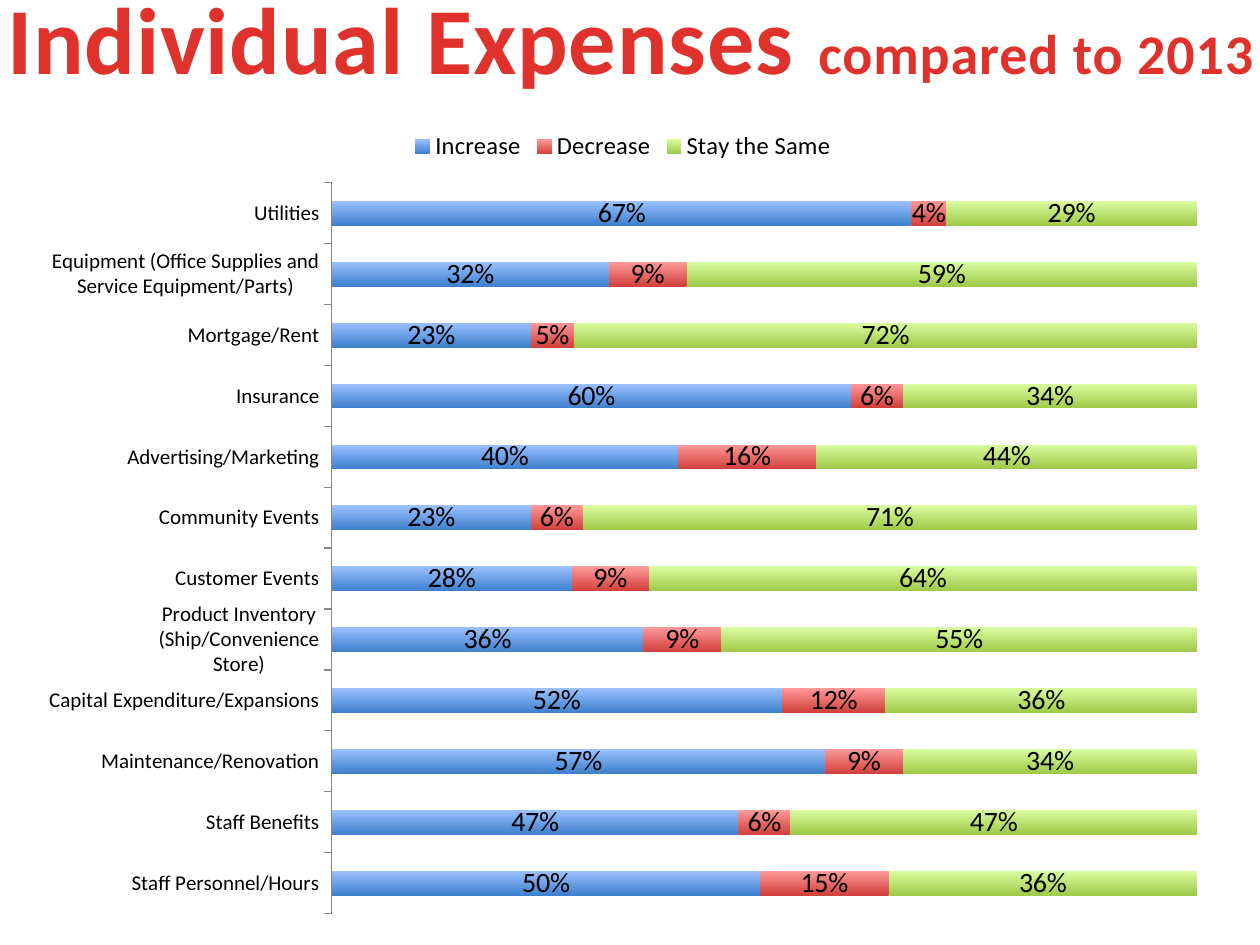
from dataclasses import dataclass

from pptx import Presentation
from pptx.chart.data import CategoryChartData
from pptx.dml.color import RGBColor
from pptx.enum.chart import XL_CHART_TYPE, XL_LEGEND_POSITION, XL_TICK_LABEL_POSITION, XL_TICK_MARK
from pptx.enum.text import MSO_AUTO_SIZE, PP_ALIGN
from pptx.util import Inches, Pt

FONT = "Calibri"
TITLE_RED = RGBColor(0xE0, 0x32, 0x2D)
BLACK = RGBColor(0, 0, 0)
AXIS_GRAY = RGBColor(0x86, 0x86, 0x86)


@dataclass
class Answer:
    name: str
    top: RGBColor
    bottom: RGBColor


ANSWERS = [
    Answer("Increase", RGBColor(0x9B, 0xC1, 0xFF), RGBColor(0x3F, 0x80, 0xCD)),
    Answer("Decrease", RGBColor(0xFF, 0x9A, 0x99), RGBColor(0xD1, 0x40, 0x3C)),
    Answer("Stay the Same", RGBColor(0xDA, 0xFD, 0xA0), RGBColor(0x9F, 0xCA, 0x49)),
]

EXPENSES = [
    ("Staff Personnel/Hours", 0.50, 0.15, 0.36),
    ("Staff Benefits", 0.47, 0.06, 0.47),
    ("Maintenance/Renovation", 0.57, 0.09, 0.34),
    ("Capital Expenditure/Expansions", 0.52, 0.12, 0.36),
    ("Product Inventory (Ship/Convenience Store)", 0.36, 0.09, 0.55),
    ("Customer Events", 0.28, 0.09, 0.64),
    ("Community Events", 0.23, 0.06, 0.71),
    ("Advertising/Marketing", 0.40, 0.16, 0.44),
    ("Insurance", 0.60, 0.06, 0.34),
    ("Mortgage/Rent", 0.23, 0.05, 0.72),
    ("Equipment (Office Supplies and Service Equipment/Parts)", 0.32, 0.09, 0.59),
    ("Utilities", 0.67, 0.04, 0.29),
]


def set_font(font, size: float, color: RGBColor = BLACK, bold: bool = False) -> None:
    font.name = FONT
    font.size = Pt(size)
    font.bold = bold
    font.color.rgb = color


def add_title(s) -> None:
    tf = s.shapes.add_textbox(Inches(-0.21), Inches(-0.21), Inches(10.43), Inches(1.01)).text_frame
    tf.word_wrap = False
    tf.auto_size = MSO_AUTO_SIZE.SHAPE_TO_FIT_TEXT
    p = tf.paragraphs[0]
    p.alignment = PP_ALIGN.CENTER
    for text, size in (("Individual Expenses ", 54), ("compared to 2013", 32)):
        r = p.add_run()
        r.text = text
        set_font(r.font, size, TITLE_RED, bold=True)
        r._r.get_or_add_rPr().set("spc", "50")


def style_series(series, answer: Answer) -> None:
    fill = series.format.fill
    fill.gradient()
    fill.gradient_angle = 270
    for stop, color in zip(fill.gradient_stops, (answer.top, answer.bottom)):
        stop.color.rgb = color
    labels = series.data_labels
    labels.show_value = True
    labels.number_format = "0%"
    labels.number_format_is_linked = False
    set_font(labels.font, 16)


def add_expense_chart(s) -> None:
    data = CategoryChartData(number_format="0%")
    names, *columns = zip(*EXPENSES)
    data.categories = names
    for answer, values in zip(ANSWERS, columns):
        data.add_series(answer.name, values)
    chart = s.shapes.add_chart(
        XL_CHART_TYPE.BAR_STACKED_100, Inches(0.2), Inches(0.93), Inches(9.49), Inches(6.45), data
    ).chart
    set_font(chart.font, 10)
    chart.has_title = False
    chart.has_legend = True
    chart.legend.position = XL_LEGEND_POSITION.TOP
    chart.legend.include_in_layout = False
    set_font(chart.legend.font, 14)

    category_axis = chart.category_axis
    category_axis.major_tick_mark = XL_TICK_MARK.OUTSIDE
    category_axis.tick_label_position = XL_TICK_LABEL_POSITION.NEXT_TO_AXIS
    category_axis.format.line.color.rgb = AXIS_GRAY
    set_font(category_axis.tick_labels.font, 12)
    chart.value_axis.has_major_gridlines = False
    chart.value_axis.visible = False

    plot = chart.plots[0]
    plot.gap_width = 150
    plot.overlap = 100
    for series, answer in zip(plot.series, ANSWERS):
        style_series(series, answer)


def main() -> None:
    prs = Presentation()
    prs.slide_width, prs.slide_height = Inches(10), Inches(7.5)
    s = prs.slides.add_slide(prs.slide_layouts[6])
    add_title(s)
    add_expense_chart(s)
    prs.save("out.pptx")


if __name__ == "__main__":
    main()
